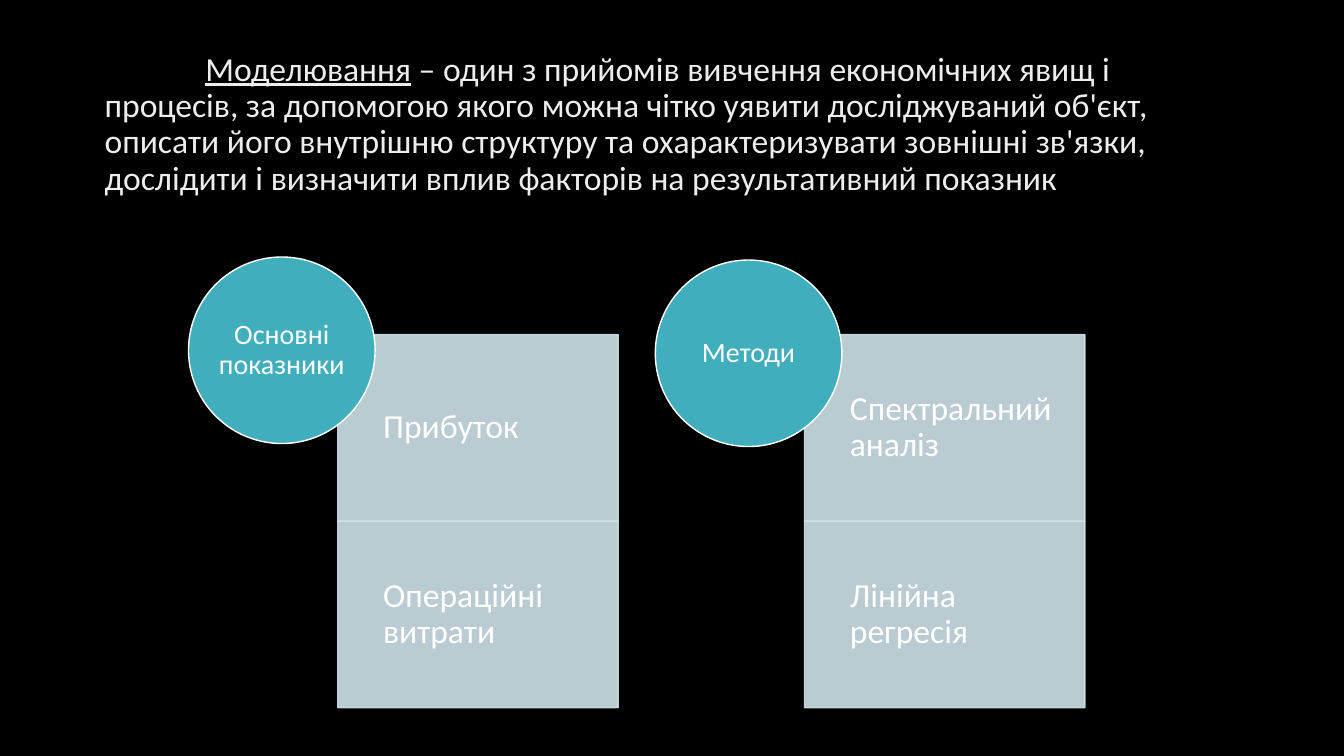
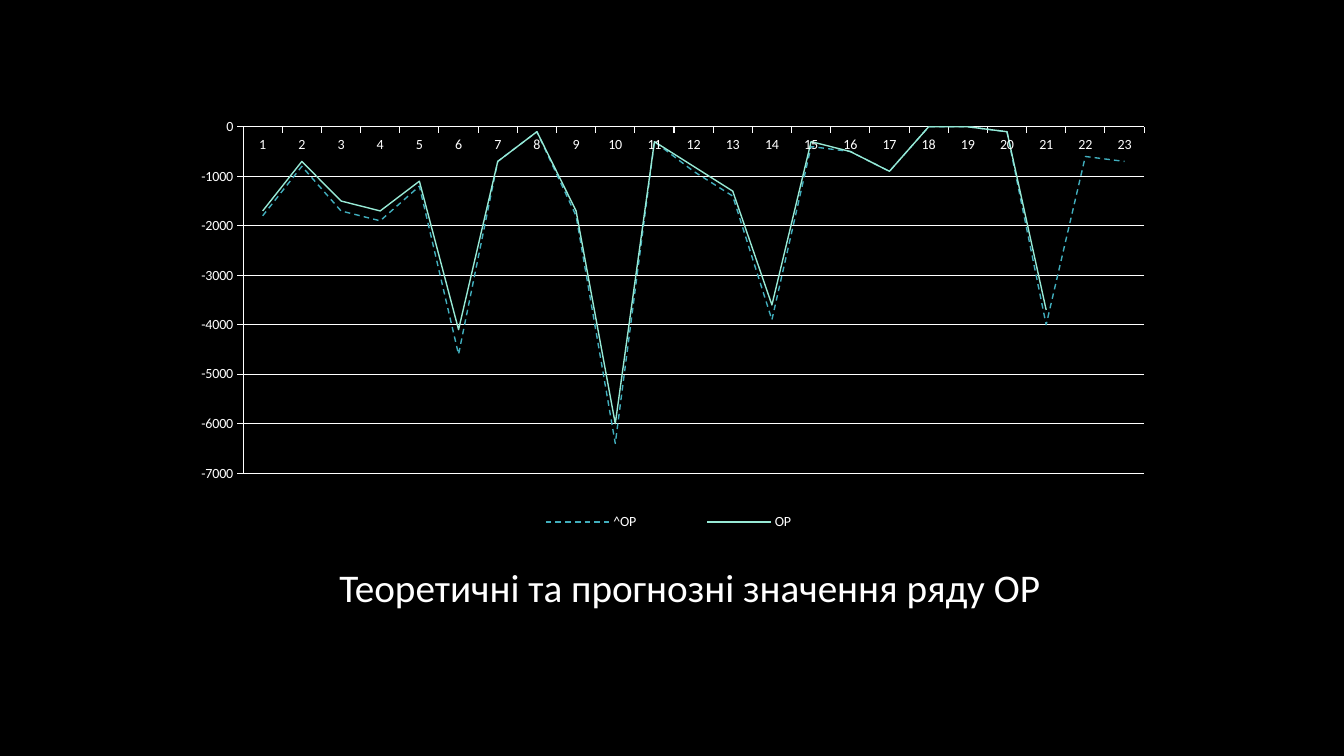
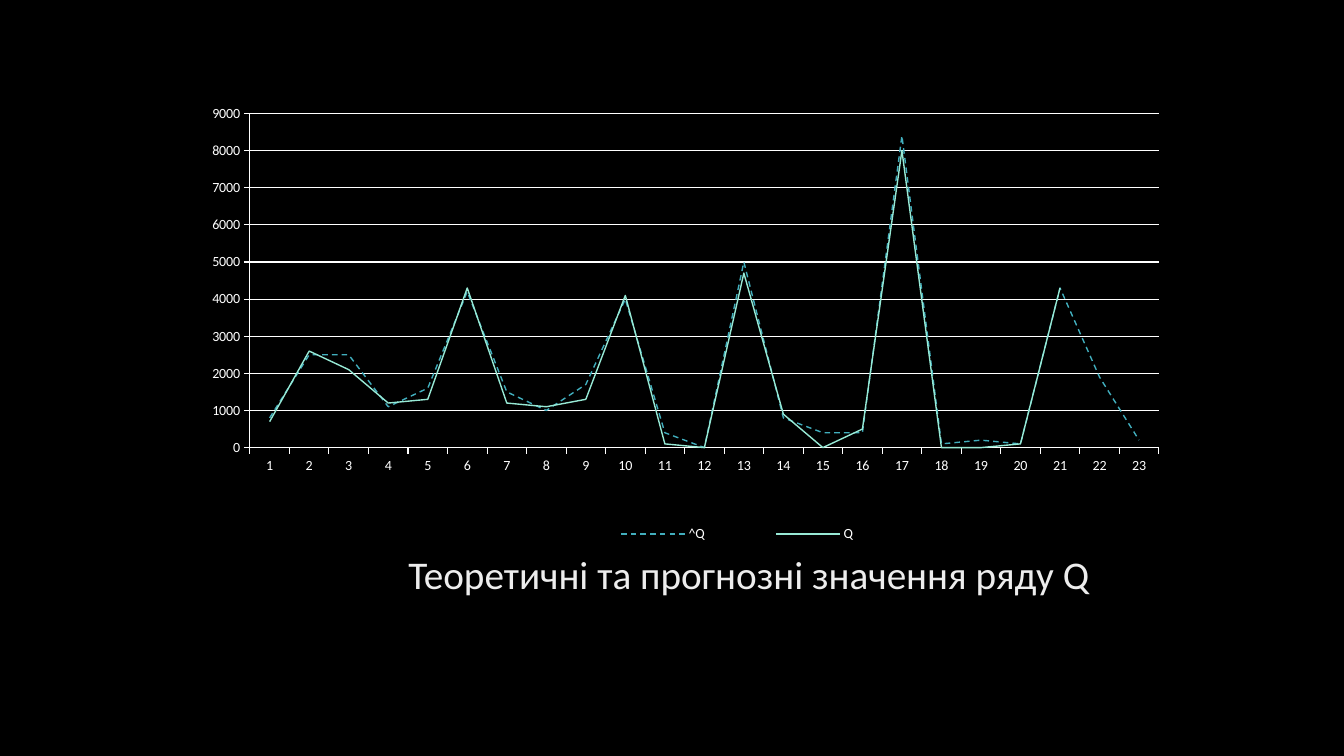
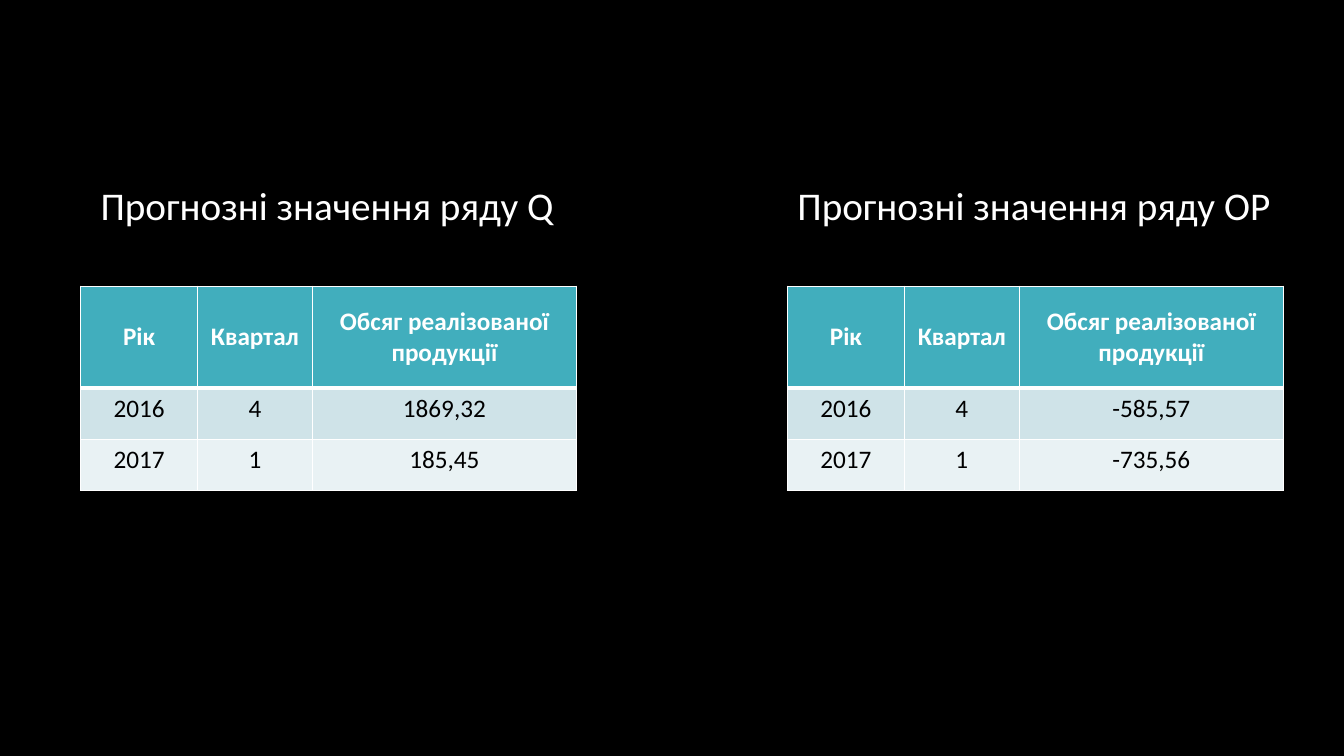
"""Build a four-slide deck on modelling and forecasting economic series."""
from dataclasses import dataclass
from typing import Optional

from lxml import etree
from pptx import Presentation
from pptx.chart.data import CategoryChartData
from pptx.dml.color import RGBColor
from pptx.enum.chart import XL_CHART_TYPE, XL_LEGEND_POSITION, XL_TICK_MARK
from pptx.enum.dml import MSO_LINE
from pptx.enum.shapes import MSO_SHAPE
from pptx.enum.text import MSO_ANCHOR, PP_ALIGN
from pptx.oxml import parse_xml
from pptx.oxml.ns import nsdecls, qn
from pptx.util import Inches, Pt

LINE = XL_CHART_TYPE.LINE
BOTTOM = XL_LEGEND_POSITION.BOTTOM
OUTSIDE, NO_TICK = XL_TICK_MARK.OUTSIDE, XL_TICK_MARK.NONE
SOLID, DASH = MSO_LINE.SOLID, MSO_LINE.DASH
RECT, OVAL = MSO_SHAPE.RECTANGLE, MSO_SHAPE.OVAL
TOP, MIDDLE = MSO_ANCHOR.TOP, MSO_ANCHOR.MIDDLE
LEFT, CENTER = PP_ALIGN.LEFT, PP_ALIGN.CENTER

FONT = "Calibri"
COLORS = {
    "black": "000000", "white": "FFFFFF", "soft": "EDEDED", "teal": "41AEBD",
    "mint": "97E9D5", "pale": "CFE3E8", "paler": "E9F2F4",
}
WIDTH, HEIGHT = Inches(13.33), Inches(7.5)

COLUMN_STEP = 34.73
PANEL_W, PANEL_H = 20.86, 24.67
CIRCLE_W = 13.88
COL_WIDTHS = (8.7, 8.55, 19.65)
ROW_HEIGHTS = (13.47, 6.8, 6.8)
TABLE_HEAD = ("Рік", "Квартал", "Обсяг реалізованої продукції")


@dataclass(frozen=True)
class Box:
    """A rectangle in percent of the slide's width and height."""
    x: float
    y: float
    w: float
    h: float

    def emu(self) -> tuple[int, int, int, int]:
        """Return left, top, width and height in EMU."""
        return across(self.x), down(self.y), across(self.w), down(self.h)


@dataclass(frozen=True)
class Topic:
    """A circle heading with the panels listed beneath it."""
    title: str
    circle_y: float
    items: tuple[str, ...]


@dataclass(frozen=True)
class Series:
    """One line of a chart."""
    name: str
    values: tuple[int, ...]
    color: str
    dash: MSO_LINE


@dataclass(frozen=True)
class LineChart:
    """A line chart; plot and legend are shares of the chart frame."""
    box: Box
    plot: tuple[float, ...]
    legend: tuple[float, ...]
    low: int
    high: int
    series: tuple[Series, ...]


@dataclass(frozen=True)
class Forecast:
    """A headed table of forecast values."""
    title: str
    title_box: Box
    table_x: float
    rows: tuple[tuple[str, ...], ...]


TOPICS = (
    Topic("Основні показники", 34.0, ("Прибуток", "Операційні витрати")),
    Topic("Методи", 34.4, ("Спектральний аналіз", "Лінійна регресія")),
)
OP_CHART = LineChart(
    Box(4.95, 13.73, 85.3, 58.53), (0.154, 0.052, 0.786, 0.783),
    (0.36, 0.91, 0.33, 0.07), -7000, 0,
    (Series("^OP", (-1800, -800, -1700, -1900, -1200, -4600, -700, -100, -1800,
                    -6400, -300, -900, -1400, -3900, -400, -500, -900, 0, 0,
                    -100, -4000, -600, -700), "teal", DASH),
     Series("OP", (-1700, -700, -1500, -1700, -1100, -4100, -700, -100, -1700,
                   -6000, -300, -800, -1300, -3600, -300, -500, -900, 0, 0,
                   -100, -3700), "mint", SOLID)),
)
Q_CHART = LineChart(
    Box(12.3, 11.2, 85.07, 63.6), (0.074, 0.06, 0.795, 0.695),
    (0.34, 0.9, 0.32, 0.07), 0, 9000,
    (Series("^Q", (800, 2500, 2500, 1100, 1600, 4200, 1500, 1000, 1700, 4000,
                   400, 0, 5000, 800, 400, 400, 8400, 100, 200, 100, 4300,
                   1900, 200), "teal", DASH),
     Series("Q", (700, 2600, 2100, 1200, 1300, 4300, 1200, 1100, 1300, 4100,
                  100, 0, 4700, 900, 0, 500, 8000, 0, 0, 100, 4300),
            "mint", SOLID)),
)
FORECASTS = (
    Forecast("Прогнозні значення ряду Q", Box(6.75, 23.33, 36.08, 7.6), 6.0,
             (("2016", "4", "1869,32"), ("2017", "1", "185,45"))),
    Forecast("Прогнозні значення ряду OP", Box(58.59, 23.33, 37.73, 7.6), 58.59,
             (("2016", "4", "-585,57"), ("2017", "1", "-735,56"))),
)


def across(share: float) -> int:
    """Convert percent of the slide's width to EMU."""
    return round(WIDTH * share / 100)


def down(share: float) -> int:
    """Convert percent of the slide's height to EMU."""
    return round(HEIGHT * share / 100)


def rgb(name: str) -> RGBColor:
    """Look up a named colour."""
    return RGBColor.from_string(COLORS[name])


def set_font(font, size: float, color: str = "white", bold: bool = False) -> None:
    """Apply the deck's font."""
    font.name, font.size, font.bold = FONT, Pt(size), bold
    font.color.rgb = rgb(color)


def add_text(slide, box: Box, text: str, size: float, color: str = "white",
             align: PP_ALIGN = LEFT, spacing: float = 1.0, indent: float = 0,
             wrap: bool = False, underlined: str = "") -> None:
    """Add a one-paragraph text box, optionally opening with underlined words."""
    tf = slide.shapes.add_textbox(*box.emu()).text_frame
    tf.word_wrap = wrap
    p = tf.paragraphs[0]
    if indent:
        pPr = p._p.get_or_add_pPr()
        pPr.set("marL", "0")
        pPr.set("indent", str(Inches(indent)))
    p.alignment, p.line_spacing = align, spacing
    if underlined:
        r = p.add_run()
        r.text, r.font.underline = underlined, True
    p.add_run().text = text
    set_font(p.font, size, color)


def add_labelled_shape(slide, kind: MSO_SHAPE, box: Box, text: str, size: float,
                       fill: str, line: str, align: PP_ALIGN,
                       insets: tuple[float, ...], opacity: int = 100) -> None:
    """Add a filled shape carrying its own text."""
    sp = slide.shapes.add_shape(kind, *box.emu())
    sp.shadow.inherit = False
    sp.fill.solid()
    sp.fill.fore_color.rgb = rgb(fill)
    sp.line.color.rgb, sp.line.width = rgb(line), Pt(1)
    if opacity < 100:
        for color in sp._element.spPr.iter(qn("a:srgbClr")):
            etree.SubElement(color, qn("a:alpha"), val=str(opacity * 1000))
    tf = sp.text_frame
    tf.word_wrap, tf.vertical_anchor = True, MIDDLE
    (tf.margin_left, tf.margin_top,
     tf.margin_right, tf.margin_bottom) = map(Inches, insets)
    p = tf.paragraphs[0]
    p.text, p.alignment, p.line_spacing = text, align, 0.9
    set_font(p.font, size)


def add_topic(slide, topic: Topic, column: int) -> None:
    """Draw a stack of panels with a circle over its corner."""
    shift = column * COLUMN_STEP
    for row, item in enumerate(topic.items):
        box = Box(25.13 + shift, 44.27 + row * PANEL_H, PANEL_W, PANEL_H)
        add_labelled_shape(slide, RECT, box, item, 24, "pale", "pale", LEFT,
                           (0.45, 0.19, 0.19, 0.19), 90)
    circle = Box(14.03 + shift, topic.circle_y, CIRCLE_W, PANEL_H)
    add_labelled_shape(slide, OVAL, circle, topic.title, 20, "teal", "white",
                       CENTER, (0, 0, 0, 0))


def set_layout(parent, index: int, shares: tuple[float, ...],
               inner: bool = False) -> None:
    """Place a chart part by shares of the chart frame."""
    old = parent.find(qn("c:layout"))
    if old is not None:
        parent.remove(old)
    tags = [("layoutTarget", "inner")] if inner else []
    tags += [("xMode", "edge"), ("yMode", "edge"), *zip("xywh", shares)]
    body = "".join(f'<c:{tag} val="{val}"/>' for tag, val in tags)
    parent.insert(index, parse_xml(
        f'<c:layout {nsdecls("c")}><c:manualLayout>{body}</c:manualLayout></c:layout>'))


def add_line_chart(slide, spec_chart: LineChart) -> None:
    """Add a line chart with white axes and a legend below."""
    data = CategoryChartData()
    data.categories = [str(n + 1) for n in range(len(spec_chart.series[0].values))]
    for series in spec_chart.series:
        data.add_series(series.name, series.values)
    chart = slide.shapes.add_chart(LINE, *spec_chart.box.emu(), data).chart
    chart.has_title = False
    set_font(chart.font, 10)

    for axis in (chart.category_axis, chart.value_axis):
        axis.major_tick_mark, axis.minor_tick_mark = OUTSIDE, NO_TICK
        axis.format.line.color.rgb = rgb("white")
        axis.format.line.width = Pt(0.75)
    values = chart.value_axis
    values.minimum_scale, values.maximum_scale = spec_chart.low, spec_chart.high
    values.major_unit = 1000
    values.has_major_gridlines = True
    grid = values.major_gridlines.format.line
    grid.color.rgb, grid.width = rgb("white"), Pt(0.75)

    plot = chart.plots[0]
    plot.vary_by_categories = False
    for line, series in zip(plot.series, spec_chart.series):
        line.smooth = False
        stroke = line.format.line
        stroke.color.rgb, stroke.width = rgb(series.color), Pt(1)
        stroke.dash_style = series.dash

    chart.has_legend = True
    chart.legend.position = BOTTOM
    chart.legend.include_in_layout = False
    set_layout(chart._chartSpace.chart.plotArea, 0, spec_chart.plot, True)
    set_layout(chart.legend._element, 1, spec_chart.legend)


def set_borders(cell, top: float, bottom: float) -> None:
    """Draw white borders round a table cell."""
    tcPr = cell._tc.get_or_add_tcPr()
    sides = (("lnL", 1), ("lnR", 1), ("lnT", top), ("lnB", bottom))
    for index, (tag, width) in enumerate(sides):
        tcPr.insert(index, parse_xml(
            f'<a:{tag} {nsdecls("a")} w="{Pt(width)}"><a:solidFill>'
            f'<a:srgbClr val="{COLORS["white"]}"/></a:solidFill></a:{tag}>'))


def add_forecast(slide, forecast: Forecast) -> None:
    """Add a heading and its forecast table."""
    add_text(slide, forecast.title_box, forecast.title, 28)
    rows = (TABLE_HEAD, *forecast.rows)
    box = Box(forecast.table_x, 37.87, sum(COL_WIDTHS), sum(ROW_HEIGHTS))
    table = slide.shapes.add_table(len(rows), len(TABLE_HEAD), *box.emu()).table
    table.horz_banding = False
    for column, width in zip(table.columns, COL_WIDTHS):
        column.width = across(width)
    for i, (row, height) in enumerate(zip(rows, ROW_HEIGHTS)):
        table.rows[i].height = down(height)
        head = i == 0
        for j, text in enumerate(row):
            cell = table.cell(i, j)
            cell.fill.solid()
            cell.fill.fore_color.rgb = rgb(("teal", "pale", "paler")[i])
            cell.vertical_anchor = MIDDLE if head else TOP
            set_borders(cell, 3 if i == 1 else 1, 3 if head else 1)
            p = cell.text_frame.paragraphs[0]
            p.text, p.alignment = text, CENTER
            set_font(p.font, 18, "white" if head else "black", head)


def add_slide(prs, chart: Optional[LineChart] = None):
    """Add a blank slide, with a chart if one is given."""
    slide = prs.slides.add_slide(prs.slide_layouts[6])
    if chart:
        add_line_chart(slide, chart)
    return slide


def main() -> None:
    """Build and save the deck."""
    prs = Presentation()
    prs.slide_width, prs.slide_height = WIDTH, HEIGHT
    background = prs.slide_master.background.fill
    background.solid()
    background.fore_color.rgb = rgb("black")

    s = add_slide(prs)
    add_text(s, Box(7.05, 6.27, 83.95, 26),
             " – один з прийомів вивчення економічних явищ і процесів, за допомогою "
             "якого можна чітко уявити досліджуваний об'єкт, описати його внутрішню "
             "структуру та охарактеризувати зовнішні зв'язки, дослідити і визначити "
             "вплив факторів на результативний показник",
             24, "soft", spacing=0.9, indent=1, wrap=True, underlined="Моделювання")
    for column, topic in enumerate(TOPICS):
        add_topic(s, topic, column)

    s = add_slide(prs, OP_CHART)
    add_text(s, Box(19.95, 70.8, 59.04, 9.73),
             "Теоретичні та прогнозні значення ряду OP", 28,
             align=CENTER, spacing=1.5, indent=0.49)

    s = add_slide(prs, Q_CHART)
    add_text(s, Box(13.73, 72.8, 83.95, 27.2),
             "Теоретичні та прогнозні значення ряду Q", 28, "soft",
             align=CENTER, spacing=0.9, wrap=True)

    s = add_slide(prs)
    for forecast in FORECASTS:
        add_forecast(s, forecast)

    prs.save("out.pptx")


if __name__ == "__main__":
    main()
